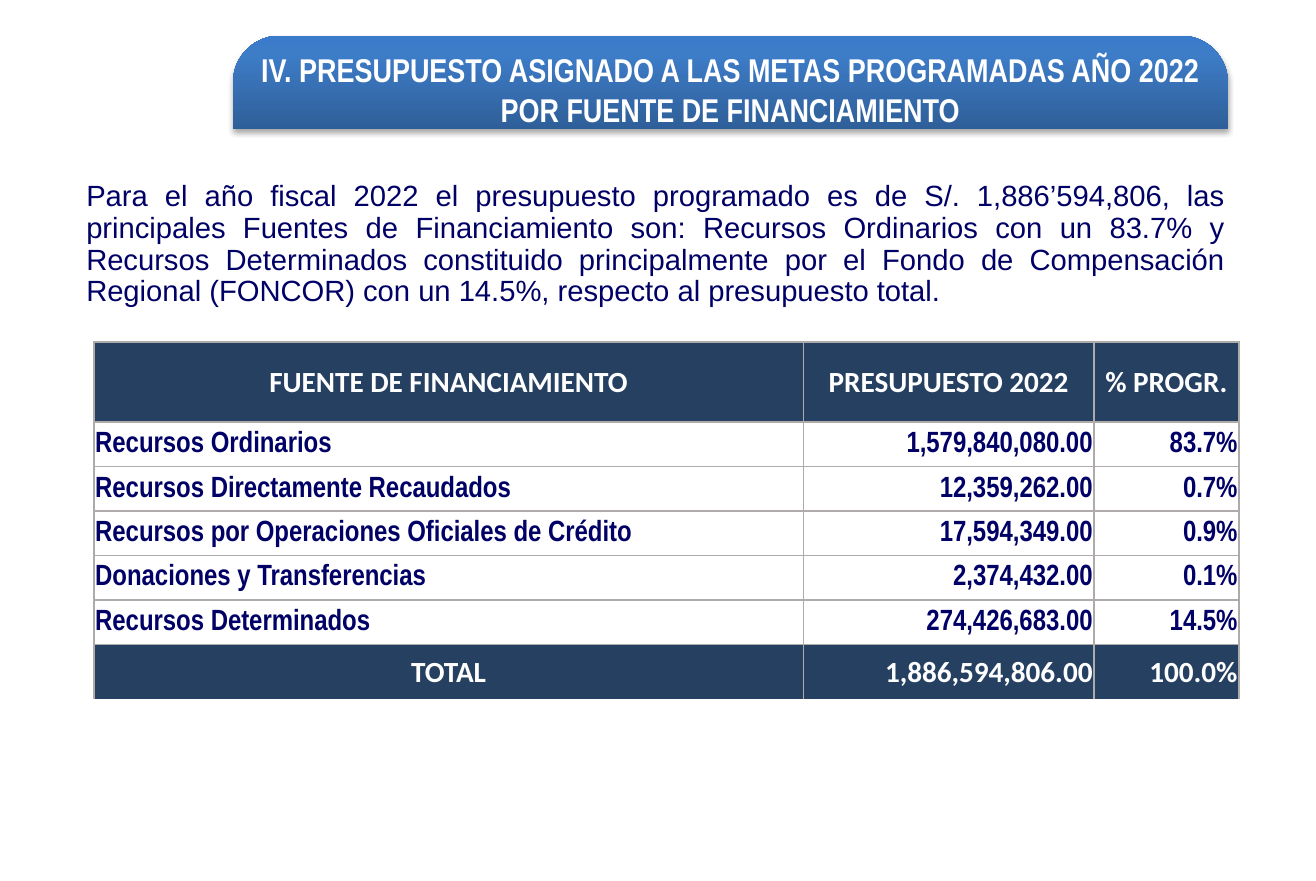
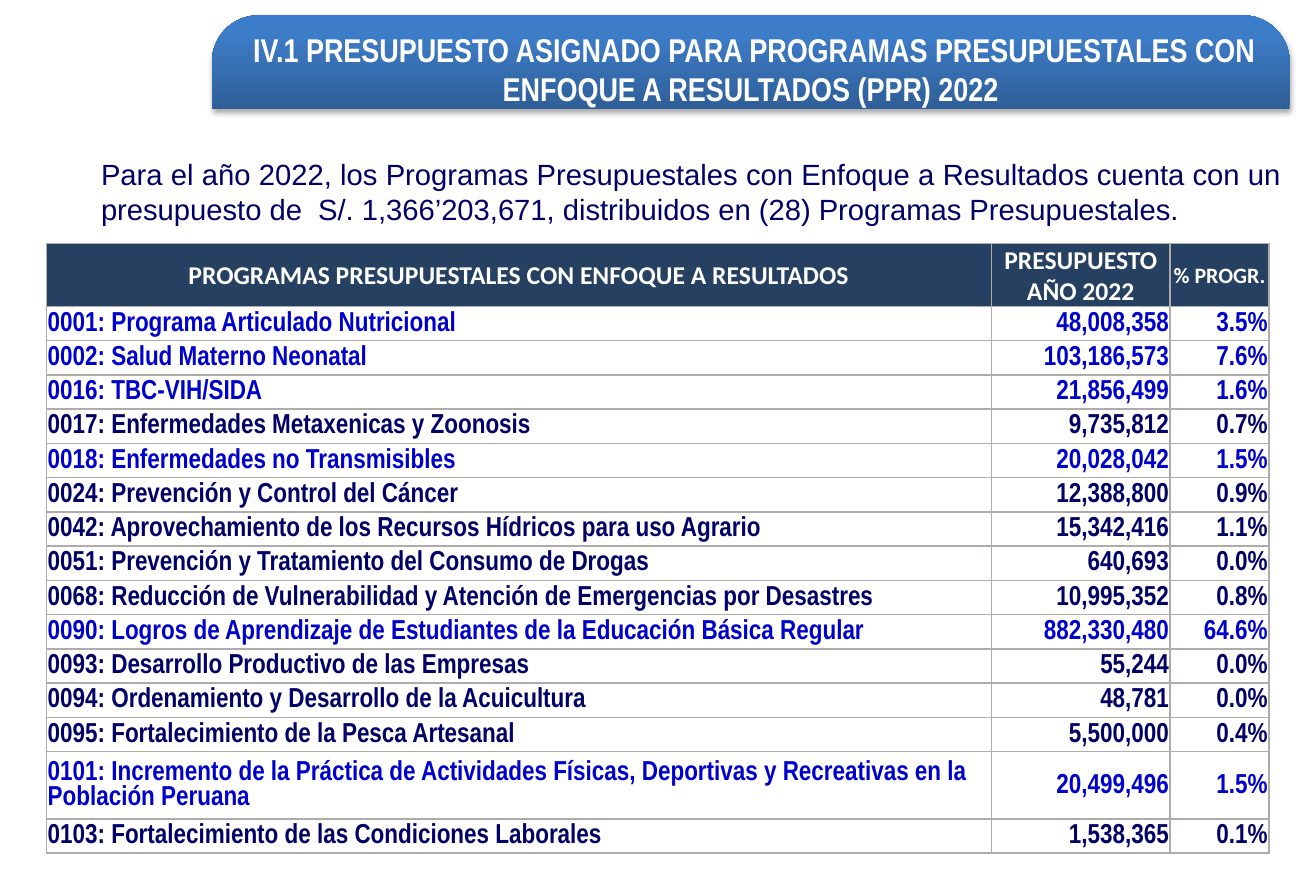
from dataclasses import dataclass

import lxml.etree
import pptx
import pptx.dml.color
import pptx.enum.shapes
import pptx.enum.text
import pptx.oxml
import pptx.oxml.ns
import pptx.util

Pt = pptx.util.Pt
ALIGN = pptx.enum.text.PP_ALIGN
MIDDLE = pptx.enum.text.MSO_ANCHOR.MIDDLE
NAMESPACE = 'xmlns:a="http://schemas.openxmlformats.org/drawingml/2006/main"'

COLORS = {
    "white": "FFFFFF",
    "navy": "000066",
    "highlight": "0000CC",
    "header": "254061",
    "border": "AFABAB",
    "band_low": "2F5F99",
    "band_mid": "3D7CC7",
    "band_high": "3A7CCB",
    "shadow": "000000",
}
BAND_HEIGHT = 51.1
TITLE_DROP = 3.8


@dataclass(frozen=True)
class Frame:
    left: float
    top: float
    width: float
    height: float

    def lengths(self) -> list[pptx.util.Length]:
        return [Pt(value) for value in (self.left, self.top, self.width, self.height)]


@dataclass(frozen=True)
class TextStyle:
    font: str
    size: float
    color: str
    bold: bool = True
    spacing: float | None = None


@dataclass(frozen=True)
class Row:
    cells: tuple[str, str, str]
    height: float
    styles: tuple[TextStyle, TextStyle, TextStyle]
    aligns: tuple[ALIGN, ALIGN, ALIGN]
    fill: str = "white"
    bottom_line: bool = True


@dataclass(frozen=True)
class BudgetPage:
    title: tuple[str, ...]
    band: Frame
    intro: tuple[str, ...]
    intro_frame: Frame
    intro_style: TextStyle
    intro_wraps: bool
    table_left: float
    table_top: float
    columns: tuple[float, float, float]
    rows: tuple[Row, ...]


TITLE = TextStyle("Arial Narrow", 18, "white")
INTRO = TextStyle("Arial", 16, "navy", bold=False)
INTRO_TIGHT = TextStyle("Arial", 16, "navy", bold=False, spacing=0.9)
SOURCE_HEAD = TextStyle("Calibri", 16, "white")
SOURCE_BODY = TextStyle("Arial Narrow", 16, "navy")
PROGRAM_HEAD = TextStyle("Calibri", 14, "white")
SHARE_HEAD = TextStyle("Calibri", 12, "white")
PROGRAM_BODY = TextStyle("Arial Narrow", 15, "navy")
PROGRAM_KEY = TextStyle("Arial Narrow", 15, "highlight")

CENTERED = (ALIGN.CENTER,) * 3
FIGURES = (ALIGN.LEFT, ALIGN.RIGHT, ALIGN.RIGHT)
TOTALS = (ALIGN.CENTER, ALIGN.RIGHT, ALIGN.RIGHT)

SOURCES = (
    ("Recursos Ordinarios", "1,579,840,080.00", "83.7%"),
    ("Recursos Directamente Recaudados", "12,359,262.00", "0.7%"),
    ("Recursos por Operaciones Oficiales de Crédito", "17,594,349.00", "0.9%"),
    ("Donaciones y Transferencias", "2,374,432.00", "0.1%"),
    ("Recursos Determinados", "274,426,683.00", "14.5%"),
)
PROGRAMS = (
    ("0001: Programa Articulado Nutricional", "48,008,358", "3.5%"),
    ("0002: Salud Materno Neonatal", "103,186,573", "7.6%"),
    ("0016: TBC-VIH/SIDA", "21,856,499", "1.6%"),
    ("0017: Enfermedades Metaxenicas y Zoonosis", "9,735,812", "0.7%"),
    ("0018: Enfermedades no Transmisibles", "20,028,042", "1.5%"),
    ("0024: Prevención y Control del Cáncer", "12,388,800", "0.9%"),
    ("0042: Aprovechamiento de los Recursos Hídricos para uso Agrario", "15,342,416", "1.1%"),
    ("0051: Prevención y Tratamiento del Consumo de Drogas", "640,693", "0.0%"),
    ("0068: Reducción de Vulnerabilidad y Atención de Emergencias por Desastres",
     "10,995,352", "0.8%"),
    ("0090: Logros de Aprendizaje de Estudiantes de la Educación Básica Regular",
     "882,330,480", "64.6%"),
    ("0093: Desarrollo Productivo de las Empresas", "55,244", "0.0%"),
    ("0094: Ordenamiento y Desarrollo de la Acuicultura", "48,781", "0.0%"),
    ("0095: Fortalecimiento de la Pesca Artesanal", "5,500,000", "0.4%"),
    ("0101: Incremento de la Práctica de Actividades Físicas, Deportivas y Recreativas "
     "en la Población Peruana", "20,499,496", "1.5%"),
    ("0103: Fortalecimiento de las Condiciones Laborales", "1,538,365", "0.1%"),
)
KEY_CODES = {"0001", "0002", "0016", "0018", "0090", "0101"}
TALL_CODE = "0101"


def program_row(cells: tuple[str, str, str]) -> Row:
    code = cells[0][:4]
    style = PROGRAM_KEY if code in KEY_CODES else PROGRAM_BODY
    height = 36.9 if code == TALL_CODE else 18.64
    return Row(cells, height, (style,) * 3, FIGURES)


SOURCE_ROWS = (
    Row(("FUENTE DE FINANCIAMIENTO", "PRESUPUESTO 2022", "% PROGR."),
        43.8, (SOURCE_HEAD,) * 3, CENTERED, "header"),
    *(Row(cells, 24.3, (SOURCE_BODY,) * 3, FIGURES) for cells in SOURCES),
    Row(("TOTAL", "1,886,594,806.00", "100.0%"),
        30, (SOURCE_HEAD,) * 3, TOTALS, "header", bottom_line=False),
)
PROGRAM_ROWS = (
    Row(("PROGRAMAS PRESUPUESTALES CON ENFOQUE A RESULTADOS", "PRESUPUESTO AÑO 2022", "% PROGR."),
        34, (PROGRAM_HEAD, PROGRAM_HEAD, SHARE_HEAD), CENTERED, "header"),
    *map(program_row, PROGRAMS),
)

PAGES = (
    BudgetPage(
        title=("IV. PRESUPUESTO ASIGNADO A LAS METAS PROGRAMADAS AÑO 2022",
               "POR FUENTE DE FINANCIAMIENTO"),
        band=Frame(127.5, 19.5, 544.3, BAND_HEIGHT),
        intro=("Para el año fiscal 2022 el presupuesto programado es de S/. 1,886’594,806, las "
               "principales Fuentes de Financiamiento son: Recursos Ordinarios con un 83.7% y "
               "Recursos Determinados constituido principalmente por el Fondo de Compensación "
               "Regional (FONCOR) con un 14.5%, respecto al presupuesto total.",),
        intro_frame=Frame(40.1, 95.9, 637.2, 77),
        intro_style=INTRO_TIGHT,
        intro_wraps=True,
        table_left=51.4,
        table_top=187.2,
        columns=(388.1, 159.1, 79.2),
        rows=SOURCE_ROWS,
    ),
    BudgetPage(
        title=(" IV.1 PRESUPUESTO ASIGNADO PARA PROGRAMAS PRESUPUESTALES CON "
               "ENFOQUE A RESULTADOS (PPR) 2022",),
        band=Frame(115.9, 8.4, 589.7, BAND_HEIGHT),
        intro=("Para el año 2022, los Programas Presupuestales con Enfoque a Resultados cuenta con un ",
               "presupuesto de  S/. 1,366’203,671, distribuidos en (28) Programas Presupuestales."),
        intro_frame=Frame(48.2, 82.1, 660, 43.2),
        intro_style=INTRO,
        intro_wraps=False,
        table_left=25.4,
        table_top=133.2,
        columns=(517, 97.9, 54),
        rows=PROGRAM_ROWS,
    ),
)


def rgb(name: str) -> pptx.dml.color.RGBColor:
    return pptx.dml.color.RGBColor.from_string(COLORS[name])


def write(text_frame, lines: tuple[str, ...], style: TextStyle, align: ALIGN) -> None:
    for index, line in enumerate(lines):
        para = text_frame.add_paragraph() if index else text_frame.paragraphs[0]
        para.alignment = align
        if style.spacing:
            para.line_spacing = style.spacing
        span = para.add_run()
        span.text = line
        span.font.name = style.font
        span.font.size = Pt(style.size)
        span.font.bold = style.bold
        span.font.color.rgb = rgb(style.color)


def draw_band(page, frame: Frame):
    band = page.shapes.add_shape(
        pptx.enum.shapes.MSO_SHAPE.ROUND_2_SAME_RECTANGLE, *frame.lengths())
    band.adjustments[0] = 0.5
    band.adjustments[1] = 0
    band.line.fill.background()
    stops = "".join(
        f'<a:gs pos="{position}"><a:srgbClr val="{COLORS[name]}"/></a:gs>'
        for position, name in ((0, "band_low"), (80000, "band_mid"), (100000, "band_high")))
    gradient = pptx.oxml.parse_xml(
        f'<a:gradFill {NAMESPACE} rotWithShape="1"><a:gsLst>{stops}</a:gsLst>'
        f'<a:lin ang="16200000" scaled="0"/></a:gradFill>')
    effects = pptx.oxml.parse_xml(
        f'<a:effectLst {NAMESPACE}><a:outerShdw blurRad="{Pt(3.1)}" dist="{Pt(1.8)}" '
        f'dir="5400000" rotWithShape="0"><a:srgbClr val="{COLORS["shadow"]}">'
        f'<a:alpha val="35000"/></a:srgbClr></a:outerShdw></a:effectLst>')
    outline = band.element.spPr.find(pptx.oxml.ns.qn("a:ln"))
    outline.addprevious(gradient)
    outline.addnext(effects)
    return band


def draw_title(page, lines: tuple[str, ...], frame: Frame) -> None:
    band = draw_band(page, frame)
    title = page.shapes.title
    band.element.addnext(title.element)
    title.left, title.top, title.width, title.height = Frame(
        frame.left, frame.top + TITLE_DROP, frame.width, frame.height).lengths()
    text_frame = title.text_frame
    text_frame.auto_size = pptx.enum.text.MSO_AUTO_SIZE.NONE
    text_frame.word_wrap = True
    text_frame.vertical_anchor = MIDDLE
    text_frame.margin_top = text_frame.margin_bottom = 0
    write(text_frame, lines, TITLE, ALIGN.CENTER)


def draw_intro(page, content: BudgetPage) -> None:
    box = page.shapes.add_textbox(*content.intro_frame.lengths())
    box.text_frame.word_wrap = content.intro_wraps
    write(box.text_frame, content.intro, content.intro_style, ALIGN.JUSTIFY)


def set_borders(cell, bottom_line: bool) -> None:
    properties = cell._tc.get_or_add_tcPr()
    for side in "LRTB":
        line = lxml.etree.SubElement(
            properties, pptx.oxml.ns.qn(f"a:ln{side}"), w=str(Pt(1)))
        if side == "B" and not bottom_line:
            lxml.etree.SubElement(line, pptx.oxml.ns.qn("a:noFill"))
            continue
        fill = lxml.etree.SubElement(line, pptx.oxml.ns.qn("a:solidFill"))
        lxml.etree.SubElement(fill, pptx.oxml.ns.qn("a:srgbClr"), val=COLORS["border"])


def draw_table(page, content: BudgetPage) -> None:
    frame = Frame(content.table_left, content.table_top,
                  sum(content.columns), sum(row.height for row in content.rows))
    table = page.shapes.add_table(
        len(content.rows), len(content.columns), *frame.lengths()).table
    table.first_row = table.horz_banding = False
    for column, width in zip(table.columns, content.columns):
        column.width = Pt(width)
    for table_row, row in zip(table.rows, content.rows):
        table_row.height = Pt(row.height)
        for cell, text, style, align in zip(table_row.cells, row.cells, row.styles, row.aligns):
            cell.margin_left = cell.margin_right = cell.margin_top = Pt(0.72)
            cell.margin_bottom = 0
            cell.vertical_anchor = MIDDLE
            set_borders(cell, row.bottom_line)
            cell.fill.solid()
            cell.fill.fore_color.rgb = rgb(row.fill)
            write(cell.text_frame, (text,), style, align)


def main() -> None:
    deck = pptx.Presentation()
    deck.slide_width = Pt(720)
    deck.slide_height = Pt(481.95)
    title_only = deck.slide_layouts.get_by_name("Title Only")
    for content in PAGES:
        page = deck.slides.add_slide(title_only)
        draw_title(page, content.title, content.band)
        draw_intro(page, content)
        draw_table(page, content)
    deck.save("out.pptx")


if __name__ == "__main__":
    main()
